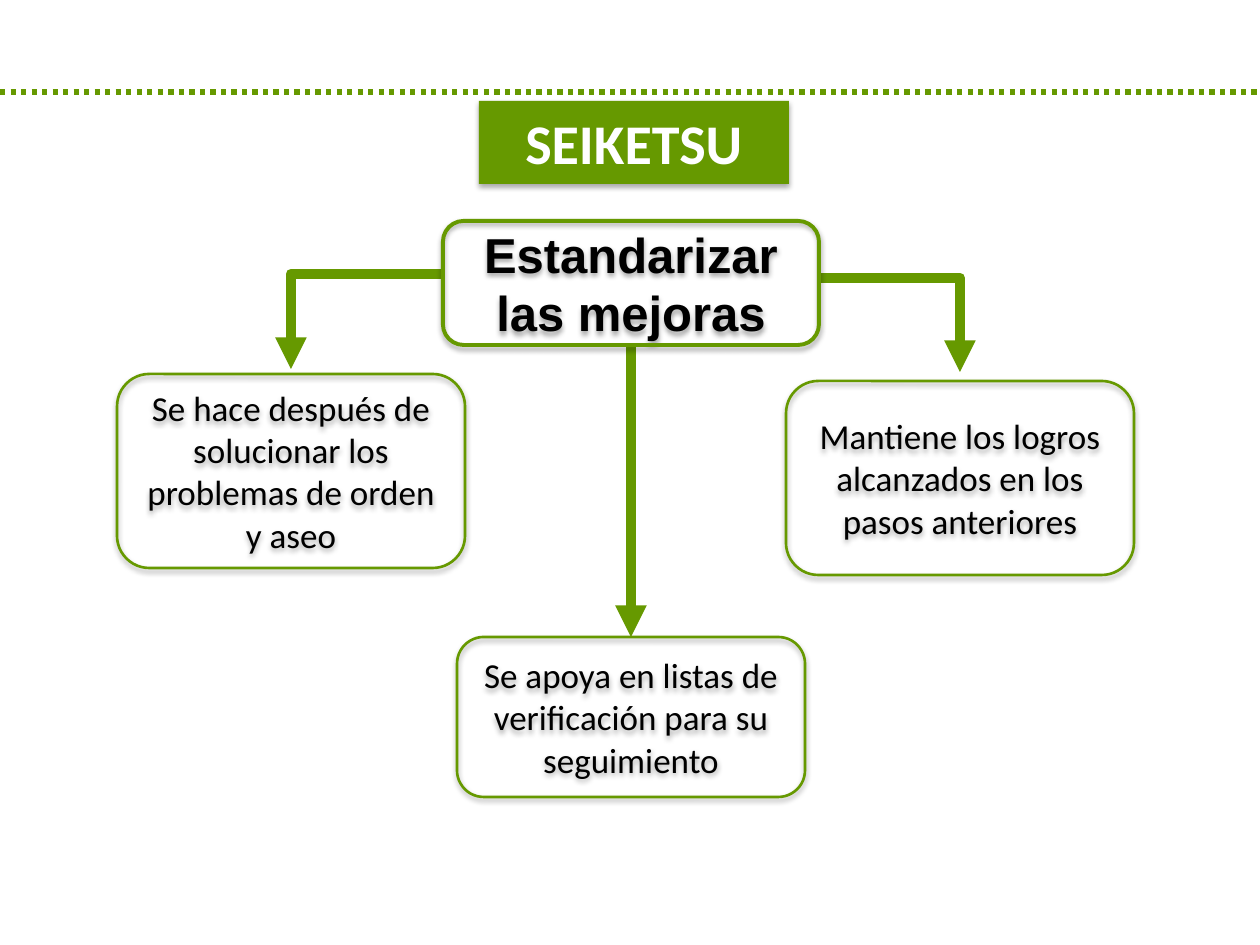
import pptx
import pptx.util
import pptx.dml.color
import pptx.enum.dml
import pptx.enum.shapes
import pptx.enum.text
import pptx.oxml
import pptx.oxml.ns

PX = 914400 / 126
GREEN = pptx.dml.color.RGBColor(0x66, 0x99, 0x00)
BLACK = pptx.dml.color.RGBColor(0, 0, 0)
WHITE = pptx.dml.color.RGBColor(255, 255, 255)
KIND = pptx.enum.shapes.MSO_CONNECTOR
NS = pptx.oxml.ns.nsdecls("a")
SHADE = (
    f'<a:effectLst {NS}><a:outerShdw blurRad="40000" dist="23000" dir="5400000" '
    'rotWithShape="0"><a:srgbClr val="000000"><a:alpha val="35000"/></a:srgbClr>'
    "</a:outerShdw></a:effectLst>"
)


def px(*vals):
    return [pptx.util.Emu(round(v * PX)) for v in vals]


def add_xml(node, text):
    node.append(pptx.oxml.parse_xml(text))


def put_text(shape, lines, size, face, color, bold):
    frame = shape.text_frame
    frame.word_wrap = True
    frame.auto_size = pptx.enum.text.MSO_AUTO_SIZE.NONE
    frame.vertical_anchor = pptx.enum.text.MSO_ANCHOR.MIDDLE
    frame.text = lines
    for para in frame.paragraphs:
        para.alignment = pptx.enum.text.PP_ALIGN.CENTER
        font = para.font
        font.size = pptx.util.Pt(size)
        font.name = face
        font.bold = bold
        font.color.rgb = color


def put_title(slide, area, text):
    title = slide.shapes.title
    title.left, title.top, title.width, title.height = px(*area)
    add_xml(title._element.spPr,
            f'<a:prstGeom {NS} prst="roundRect"><a:avLst/></a:prstGeom>')
    title.fill.solid()
    title.fill.fore_color.rgb = GREEN
    title.line.fill.background()
    add_xml(title._element.spPr, SHADE)
    put_text(title, text, 32, "Calibri", WHITE, True)


def add_box(slide, area, text, width=1.5, size=20, face="Calibri", bold=False):
    round_box = pptx.enum.shapes.MSO_SHAPE.ROUNDED_RECTANGLE
    box = slide.shapes.add_shape(round_box, *px(*area))
    box.fill.background()
    box.line.color.rgb = GREEN
    box.line.width = pptx.util.Pt(width)
    add_xml(box._element.spPr, SHADE)
    put_text(box, text, size, face, BLACK, bold)
    return box


def add_line(slide, ends, width, kind=KIND.STRAIGHT):
    line = slide.shapes.add_connector(kind, *px(*ends))
    line.line.color.rgb = GREEN
    line.line.width = pptx.util.Pt(width)
    add_xml(line._element.spPr, f"<a:effectLst {NS}/>")
    return line


def add_arrow(slide, ends, kind=KIND.STRAIGHT):
    arrow = add_line(slide, ends, 6, kind)
    add_xml(arrow.line._get_or_add_ln(), f'<a:tailEnd {NS} type="triangle"/>')
    if kind == KIND.ELBOW:
        shape = arrow._element.spPr.find(pptx.oxml.ns.qn("a:prstGeom"))
        shape.set("prst", "bentConnector2")
    return arrow


def main():
    deck = pptx.Presentation()
    deck.slide_width, deck.slide_height = px(1260, 945)
    slide = deck.slides.add_slide(deck.slide_layouts[5])

    rule = add_line(slide, (0, 92, 1260, 92), 3)
    rule.line.dash_style = pptx.enum.dml.MSO_LINE.ROUND_DOT

    add_arrow(slide, (442, 274, 291, 369), KIND.ELBOW)
    add_arrow(slide, (819, 278, 960, 372), KIND.ELBOW)
    stem = add_arrow(slide, (631, 345, 631, 637))

    put_title(slide, (479, 101, 310, 83), "SEIKETSU")
    goal = add_box(slide, (443, 221, 376, 124), "Estandarizar\nlas mejoras",
                   2.25, 28, "Arial", True)
    add_box(slide, (117, 374, 348, 194),
            "Se hace después de solucionar los problemas de orden y aseo")
    add_box(slide, (786, 381, 348, 194),
            "Mantiene los logros alcanzados en los pasos anteriores")
    check = add_box(slide, (457, 637, 348, 160),
                    "Se apoya en listas de verificación para su seguimiento")
    stem.begin_connect(goal, 2)
    stem.end_connect(check, 0)

    deck.save("out.pptx")


if __name__ == "__main__":
    main()
